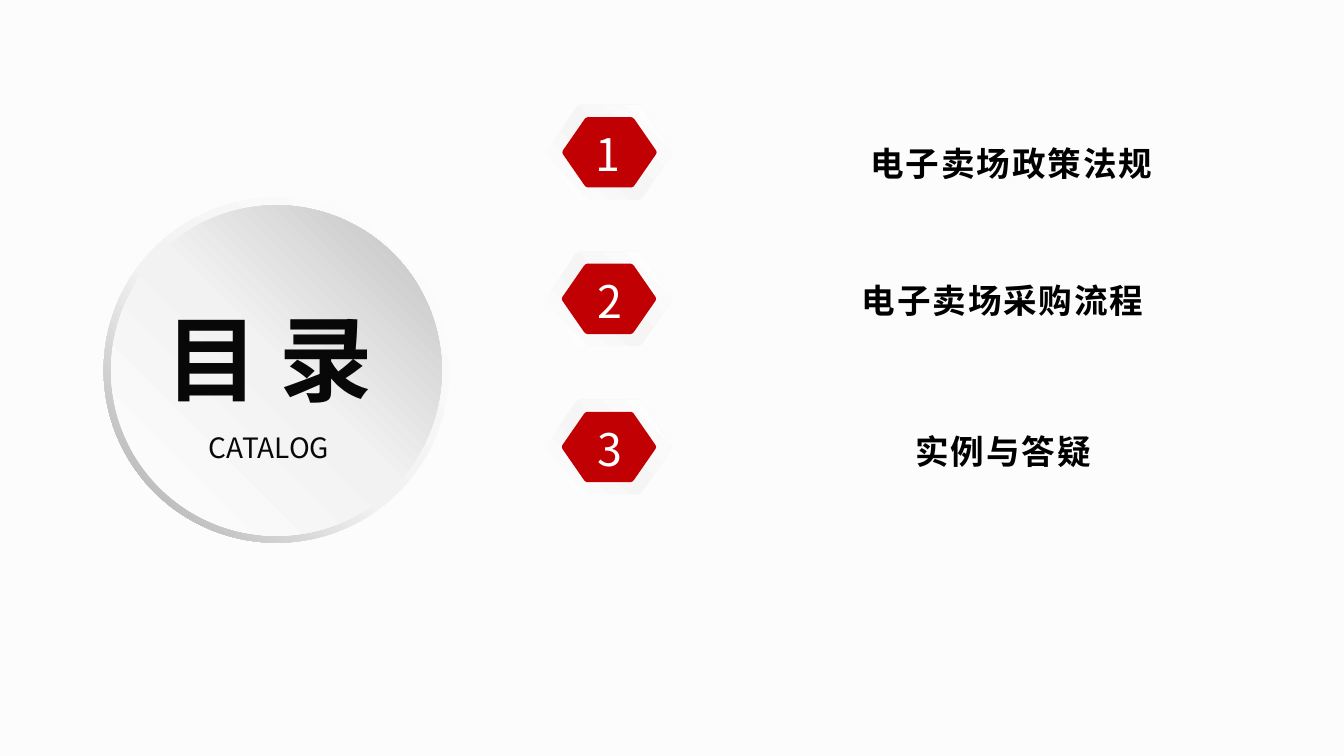
from copy import deepcopy

from lxml.etree import SubElement
from pptx import Presentation
from pptx.dml.color import RGBColor
from pptx.enum.shapes import MSO_SHAPE
from pptx.enum.text import MSO_ANCHOR, MSO_AUTO_SIZE, PP_ALIGN
from pptx.oxml.ns import qn
from pptx.util import Cm, Pt

FONT = "Noto Sans CJK SC"
HEX = {"back": "FCFCFC", "white": "FFFFFF", "pale": "F2F2F2", "mist": "F5F5F5",
       "gray": "BFBFBF", "dark": "A6A6A6", "red": "C00002", "ink": "080808",
       "black": "000000"}
COLOR = {name: RGBColor.from_string(code) for name, code in HEX.items()}


def paint(shape, stops, angle=0):
    """Fill with one colour, or with a gradient of (percent, colour) stops."""
    shape.shadow.inherit = False
    shape.line.fill.background()
    if len(stops) == 1:
        shape.fill.solid()
        shape.fill.fore_color.rgb = COLOR[stops[0][1]]
        return
    shape.fill.gradient()
    shape.fill.gradient_angle = angle
    items = shape._element.spPr.find(qn("a:gradFill")).find(qn("a:gsLst"))
    items.append(deepcopy(items[0]))
    for stop, (place, name) in zip(shape.fill.gradient_stops, stops):
        stop.position = place / 100
        stop.color.rgb = COLOR[name]


def write(text, box, size, color, bold=False, align=PP_ALIGN.CENTER, gap=0):
    """Add a one-line text box; gap is the letter spacing in points."""
    shape = slide.shapes.add_textbox(*map(Cm, box))
    frame = shape.text_frame
    frame.word_wrap = True
    frame.auto_size = MSO_AUTO_SIZE.SHAPE_TO_FIT_TEXT
    para = frame.paragraphs[0]
    para.text = text
    para.alignment = align
    font = para.font
    font.name, font.size, font.bold = FONT, Pt(size), bold
    font.color.rgb = COLOR[color]
    props = para._p.pPr.find(qn("a:defRPr"))
    SubElement(props, qn("a:ea")).set("typeface", FONT)
    if gap:
        props.set("spc", str(gap * 100))
    return frame


deck = Presentation()
deck.slide_width, deck.slide_height = Cm(25.4), Cm(14.29)
slide = deck.slides.add_slide(deck.slide_layouts[6])
slide.background.fill.solid()
slide.background.fill.fore_color.rgb = COLOR["back"]

# Title disc
ring = slide.shapes.add_shape(MSO_SHAPE.DONUT, Cm(1.96), Cm(3.73), Cm(6.53), Cm(6.53))
ring.adjustments[0] = 0.049
paint(ring, [(0, "white"), (55, "pale"), (100, "dark")], 225)
disc = slide.shapes.add_shape(MSO_SHAPE.OVAL, Cm(2.1), Cm(3.88), Cm(6.25), Cm(6.25))
paint(disc, [(0, "white"), (51, "pale"), (100, "gray")], 45)
write("目 录", (2.87, 5.56, 4.6, 2.39), 50, "ink", True, PP_ALIGN.LEFT)
frame = write("CATALOG", (3.18, 7.92, 3.81, 1.07), 15, "ink")
frame.auto_size = MSO_AUTO_SIZE.NONE
frame.vertical_anchor = MSO_ANCHOR.MIDDLE
frame.margin_left = frame.margin_right = Cm(0.18)
frame.margin_top = frame.margin_bottom = Cm(0.1)

# Hexagon with softened corners, on a half-size of one
part = [(1, 0), (0.99, 0.05), (0.53, 0.94), (0.5, 0.98), (0.46, 1)]
half = part + [(-x, y) for x, y in reversed(part)]
edge = half + [(-x, -y) for x, y in half]
layers = [(2.39, 1.8, [(0, "white")]),
          (2.37, 1.79, [(0, "white"), (47, "mist"), (100, "white")]),
          (1.78, 1.33, [(0, "red")])]

# Centre of the hexagon, left of the number, label and its box
rows = [(11.52, 2.88, 10.9, "电子卖场政策法规", (13.31, 2.34, 11.61, 1.24), 1.3),
        (11.51, 5.65, 10.95, "电子卖场采购流程", (13.49, 5.16, 10.92, 1.02), None),
        (11.51, 8.45, 10.95, "实例与答疑", (14.3, 8.03, 9.32, 1.02), None)]
for num, (mid, level, left, label, box, space) in enumerate(rows, 1):
    for wide, high, stops in layers:
        dots = [(Cm(mid + x * wide / 2), Cm(level + y * high / 2)) for x, y in edge]
        path = slide.shapes.build_freeform(*dots[0])
        path.add_line_segments(dots[1:])
        paint(path.convert_to_shape(), stops, 45)
    write(str(num), (left, level - 0.6, 1.17, 1.27), 24, "white")
    frame = write(label, box, 18, "black", True, gap=1)
    frame.paragraphs[0].line_spacing = space

deck.save("out.pptx")
